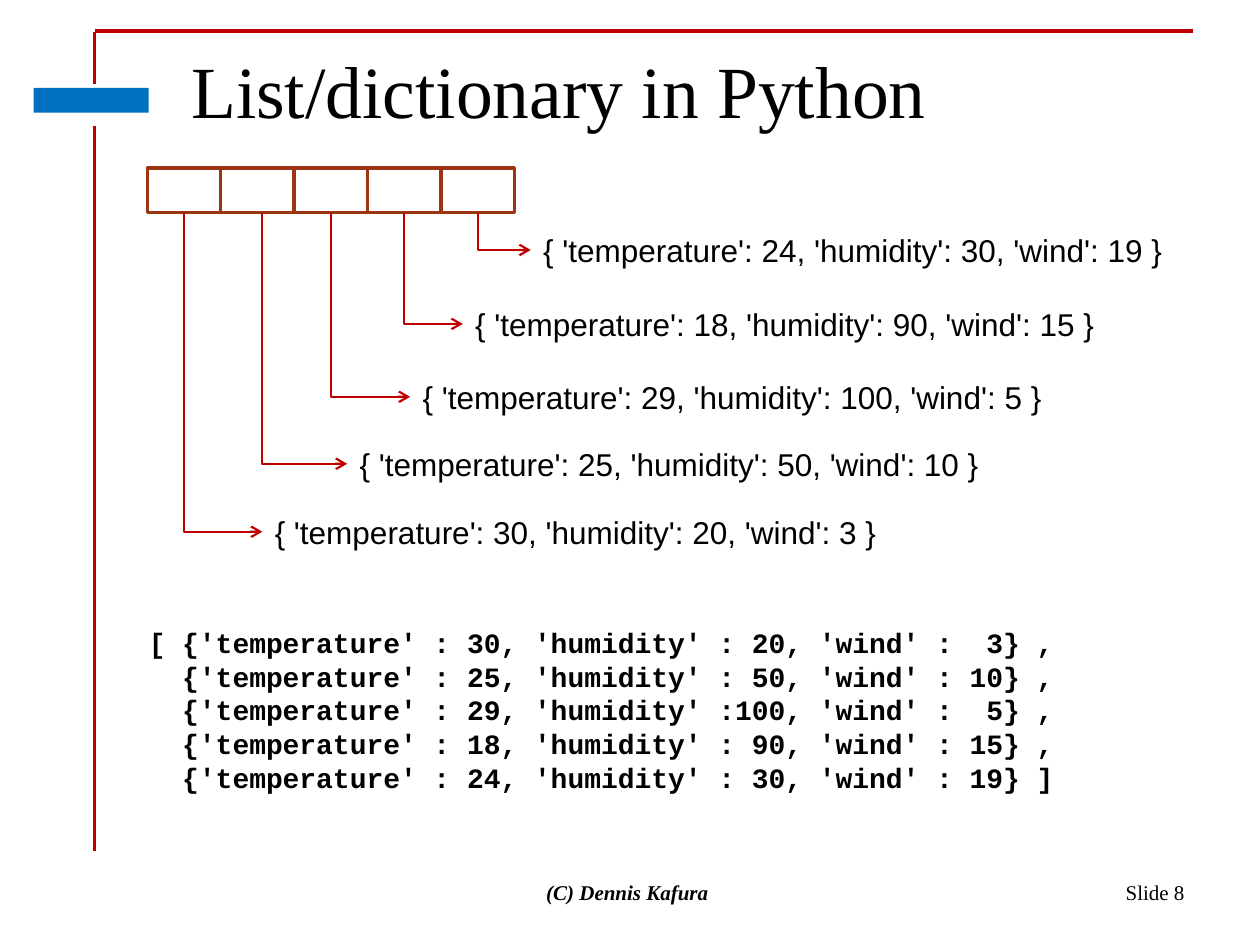
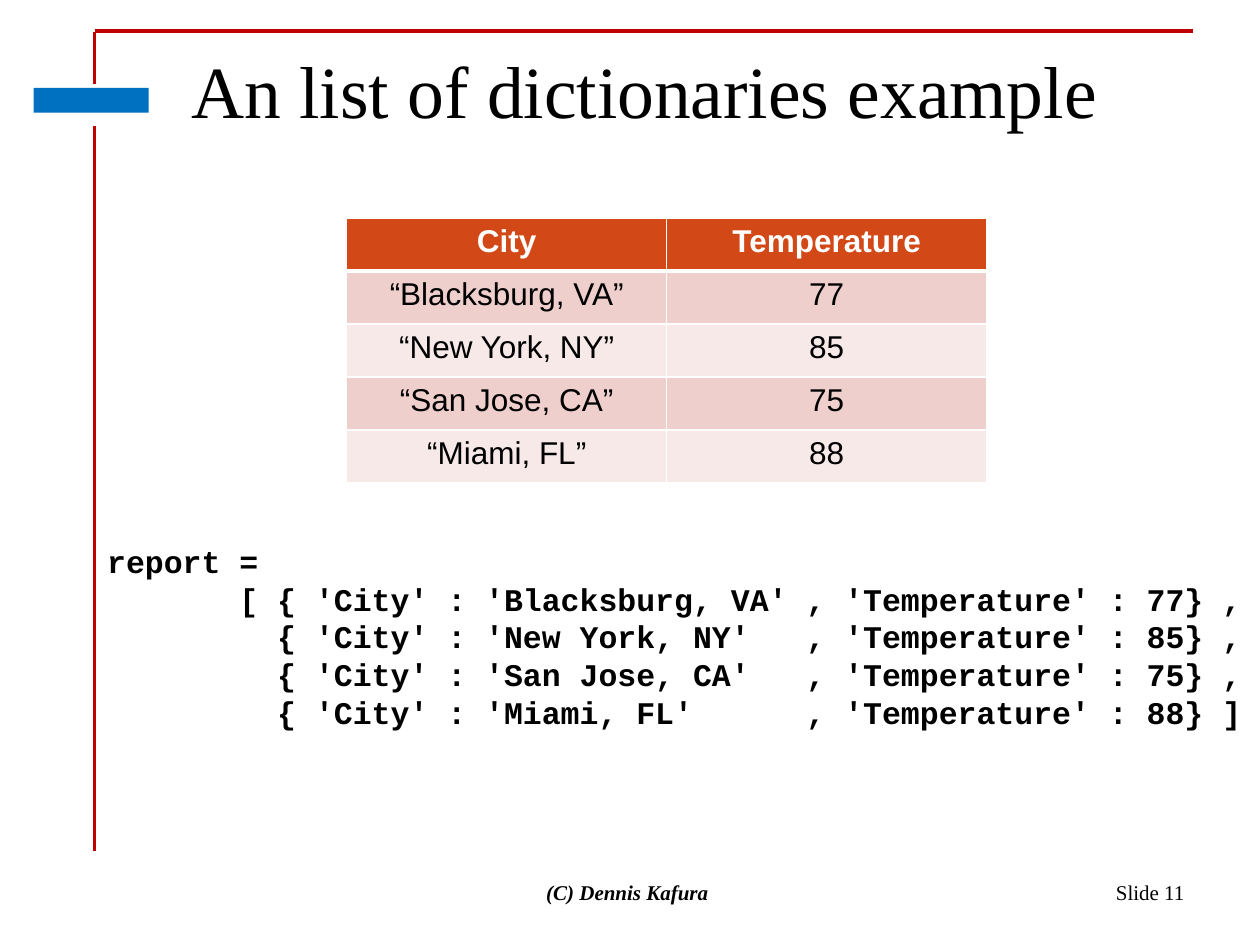
from lxml import etree
from pptx import Presentation
from pptx.dml.color import RGBColor
from pptx.enum.shapes import MSO_CONNECTOR, MSO_SHAPE
from pptx.enum.text import MSO_ANCHOR, PP_ALIGN
from pptx.oxml.ns import qn
from pptx.util import Cm, Pt

STRAIGHT, ELBOW = MSO_CONNECTOR.STRAIGHT, MSO_CONNECTOR.ELBOW
RECTANGLE = MSO_SHAPE.RECTANGLE
LEFT, CENTER, RIGHT = PP_ALIGN.LEFT, PP_ALIGN.CENTER, PP_ALIGN.RIGHT
TOP, MIDDLE, BOTTOM = MSO_ANCHOR.TOP, MSO_ANCHOR.MIDDLE, MSO_ANCHOR.BOTTOM

RED = RGBColor(0xC0, 0x00, 0x00)
BLUE = RGBColor(0x00, 0x70, 0xC0)
BLACK = RGBColor(0x00, 0x00, 0x00)
WHITE = RGBColor(0xFF, 0xFF, 0xFF)
RUST = RGBColor(0x9C, 0x35, 0x11)
ORANGE = RGBColor(0xD3, 0x48, 0x17)
PINK = RGBColor(0xEF, 0xCF, 0xCC)
PALE_PINK = RGBColor(0xF7, 0xE9, 0xE8)

SANS, SERIF, MONO = "Arial", "Times New Roman", "Courier New"

# temperature, humidity, wind
READINGS = [(30, 20, 3), (25, 50, 10), (29, 100, 5), (18, 90, 15), (24, 30, 19)]
# label left, label top and arrow start, in cm from the list's corner
LABELS = [(2.32, 6.82, 0.74), (4.03, 5.45, 2.32), (5.3, 4.1, 3.7),
          (6.36, 2.63, 5.18), (7.73, 1.14, 6.67)]
CITIES = [("Blacksburg, VA", 77), ("New York, NY", 85),
          ("San Jose, CA", 75), ("Miami, FL", 88)]


# Text
def write(p, text, size=18, font=SANS, color=BLACK, bold=False, italic=False,
          align=LEFT):
    p.alignment = align
    r = p.add_run()
    r.text = text
    r.font.size, r.font.name = Pt(size), font
    r.font.bold, r.font.italic = bold, italic
    r.font.color.rgb = color


def add_text(slide, box, lines, anchor=TOP, **fmt):
    tf = slide.shapes.add_textbox(*map(Cm, box)).text_frame
    tf.word_wrap, tf.vertical_anchor = True, anchor
    for i, line in enumerate(lines):
        p = tf.add_paragraph() if i else tf.paragraphs[0]
        write(p, line, **fmt)


# Shapes and lines
def add_rectangle(slide, box):
    sp = slide.shapes.add_shape(RECTANGLE, *map(Cm, box))
    sp.shadow.inherit = False
    return sp


def add_line(slide, x1, y1, x2, y2, width, kind=STRAIGHT):
    sp = slide.shapes.add_connector(kind, Cm(x1), Cm(y1), Cm(x2), Cm(y2))
    sp.line.color.rgb, sp.line.width = RED, Pt(width)
    etree.SubElement(sp.element.spPr, qn("a:effectLst"))
    return sp


def add_corner_arrow(slide, x1, y1, x2, y2):
    """Arrow that runs down from the start, then right to the end."""
    cx, cy = (x1 + x2) / 2, (y1 + y2) / 2
    half_w, half_h = (y2 - y1) / 2, (x2 - x1) / 2
    # Drawn lying down and mirrored, then turned by 270 degrees
    sp = add_line(slide, cx + half_w, cy - half_h, cx - half_w, cy + half_h,
                  1.25, ELBOW)
    spPr = sp.element.spPr
    spPr.find(qn("a:xfrm")).set("rot", str(270 * 60000))
    spPr.find(qn("a:prstGeom")).set("prst", "bentConnector2")
    etree.SubElement(spPr.find(qn("a:ln")), qn("a:tailEnd"), type="arrow")


# Parts that all slides share
def add_frame(slide):
    add_line(slide, 1.91, 0.63, 24.05, 0.63, 2)
    add_line(slide, 1.91, 0.64, 1.91, 1.69, 1.75)
    add_line(slide, 1.91, 2.54, 1.91, 17.15, 1.75)
    # Plain block in the gap of the side line
    sp = add_rectangle(slide, (0.68, 1.77, 2.32, 0.5))
    sp.fill.solid()
    sp.fill.fore_color.rgb = BLUE
    sp.line.fill.background()


def add_footer(slide, number):
    add_text(slide, (18.2, 17.36, 5.93, 1.27), [f"Slide {number}"], MIDDLE,
             size=12, font=SERIF, align=RIGHT)
    add_text(slide, (8.68, 17.36, 8.04, 1.27), ["(C) Dennis Kafura "], MIDDLE,
             size=12, font=SERIF, bold=True, italic=True, align=CENTER)


def new_slide(prs, title, number):
    slide = prs.slides.add_slide(prs.slide_layouts[5])
    add_frame(slide)
    sp = slide.shapes.title
    sp.left, sp.top, sp.width, sp.height = map(Cm, (3.6, 0.76, 20.53, 1.98))
    tf = sp.text_frame
    tf.vertical_anchor = BOTTOM
    tf.margin_top, tf.margin_bottom = 0, Cm(0.06)
    write(tf.paragraphs[0], title, size=42, font=SERIF)
    add_footer(slide, number)
    return slide


# List cells with an arrow from each to its dictionary
def add_list_diagram(slide, left, top):
    cell_w, cell_h, label_h = 1.48, 0.9, 1.02
    for i, (reading, place) in enumerate(zip(READINGS, LABELS)):
        sp = add_rectangle(slide, (left + i * cell_w, top, cell_w, cell_h))
        sp.fill.background()
        sp.line.color.rgb, sp.line.width = RUST, Pt(2)

        temperature, humidity, wind = reading
        x, y, start = left + place[0], top + place[1], left + place[2]
        add_text(slide, (x, y, 13.23, label_h),
                 [f"{{ 'temperature': {temperature}, 'humidity': {humidity}, "
                  f"'wind': {wind} }}"])
        add_corner_arrow(slide, start, top + cell_h, x, y + label_h / 2)


def add_code(slide, box, lines, size):
    add_text(slide, box, lines, size=size, font=MONO, bold=True)


def bracket(items, indent=""):
    """Code lines of a list, one item a line."""
    last = len(items) - 1
    return [indent + ("  " if i else "[ ") + item + (" ]" if i == last else " ,")
            for i, item in enumerate(items)]


# Table
def add_border(cell, side, width):
    ln = etree.SubElement(cell._tc.get_or_add_tcPr(), qn(f"a:ln{side}"),
                          w=str(Pt(width)))
    fill = etree.SubElement(ln, qn("a:solidFill"))
    etree.SubElement(fill, qn("a:srgbClr"), val=str(WHITE))


def add_city_table(slide, left, top, width, row_h):
    rows = [("City", "Temperature")]
    rows += [(f"“{city}”", str(degrees)) for city, degrees in CITIES]
    table = slide.shapes.add_table(len(rows), 2, Cm(left), Cm(top), Cm(width),
                                   Cm(row_h * len(rows))).table
    for i, row in enumerate(rows):
        header = i == 0
        for j, text in enumerate(row):
            cell = table.cell(i, j)
            for side in "LRTB":
                thick = header and side == "B" or i == 1 and side == "T"
                add_border(cell, side, 3 if thick else 1)
            cell.fill.solid()
            cell.fill.fore_color.rgb = (ORANGE if header else
                                        PINK if i % 2 else PALE_PINK)
            write(cell.text_frame.paragraphs[0], text, bold=header,
                  color=WHITE if header else BLACK, align=CENTER)


# Slides
def build_list_slide(prs):
    slide = new_slide(prs, "List/dictionary in Python", 8)
    add_list_diagram(slide, 2.97, 3.39)
    items = [f"{{'temperature' : {t}, 'humidity' :{h:>3}, 'wind' : {w:>2}}}"
             for t, h, w in READINGS]
    add_code(slide, (2.75, 12.49, 19.38, 3.68), bracket(items), 16)


def build_example_slide(prs):
    slide = new_slide(prs, "An list of dictionaries example", 11)
    items = [f"{{ 'City' : {repr(city):<16} , 'Temperature' : {degrees}}}"
             for city, degrees in CITIES]
    add_code(slide, (1.91, 10.8, 23.52, 4.1),
             ["report ="] + bracket(items, " " * 7), 18)
    add_city_table(slide, 6.99, 4.39, 12.9, 1.07)


def main():
    prs = Presentation()
    prs.slide_width, prs.slide_height = Cm(25.4), Cm(19.05)
    build_list_slide(prs)
    build_example_slide(prs)
    prs.save("out.pptx")


if __name__ == "__main__":
    main()
